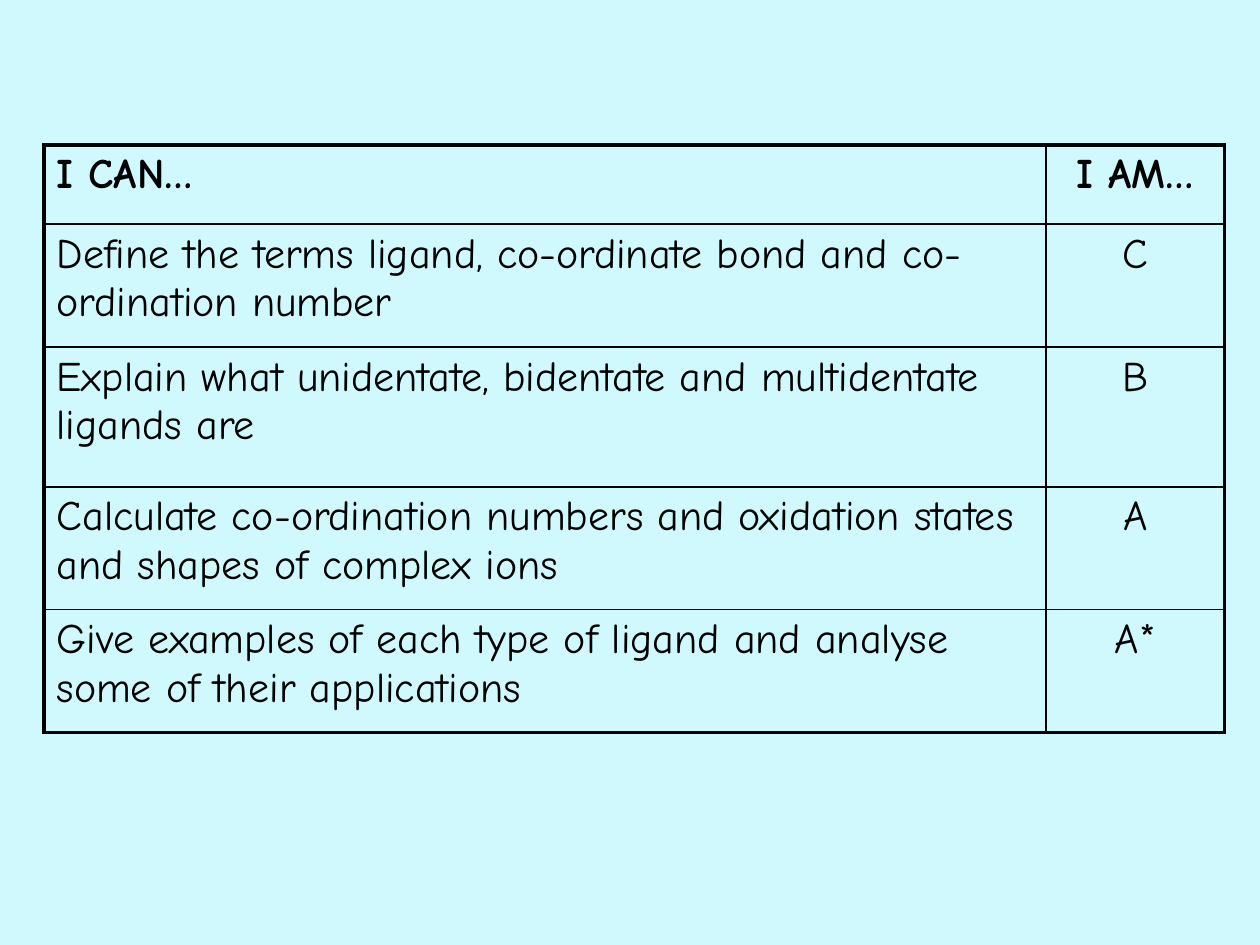
import pptx
import pptx.dml.color
import pptx.enum.text
import pptx.oxml.ns
import pptx.util
from lxml import etree


def color(value):
    return pptx.dml.color.RGBColor.from_string(value)


class Deck:
    font = "Comic Neue"
    size = 24
    ink = "000000"
    paper = "CFF9FD"
    thin = 1
    thick = 2.25

    def __init__(self, width, height):
        self.prs = pptx.Presentation()
        self.prs.slide_width = pptx.util.Inches(width)
        self.prs.slide_height = pptx.util.Inches(height)
        self.s = self.prs.slides.add_slide(self.prs.slide_layouts[6])
        fill = self.s.background.fill
        fill.solid()
        fill.fore_color.rgb = color(self.paper)

    def x(self, percent):
        return round(self.prs.slide_width * percent / 100)

    def y(self, percent):
        return round(self.prs.slide_height * percent / 100)

    def text(self, cell, content, align, bold):
        p = cell.text_frame.paragraphs[0]
        p.alignment = align
        r = p.add_run()
        r.text = content
        r.font.name = self.font
        r.font.size = pptx.util.Pt(self.size)
        r.font.bold = bold
        r.font.color.rgb = color(self.ink)

    def borders(self, cell, outer):
        tcPr = cell._tc.get_or_add_tcPr()
        for side in "LRTB":
            width = pptx.util.Pt(self.thick if side in outer else self.thin)
            ln = etree.SubElement(tcPr, pptx.oxml.ns.qn(f"a:ln{side}"), w=str(width))
            solid = etree.SubElement(ln, pptx.oxml.ns.qn("a:solidFill"))
            etree.SubElement(solid, pptx.oxml.ns.qn("a:srgbClr"), val=self.ink)

    def table(self, left, top, widths, heights, rows, aligns):
        table = self.s.shapes.add_table(
            len(rows), len(widths), self.x(left), self.y(top),
            self.x(sum(widths)), self.y(sum(heights))).table
        table.first_row = table.horz_banding = False
        for column, width in zip(table.columns, widths):
            column.width = self.x(width)
        for i, (height, row) in enumerate(zip(heights, rows)):
            table.rows[i].height = self.y(height)
            for j, content in enumerate(row):
                cell = table.cell(i, j)
                edges = {"L": j == 0, "R": j == len(widths) - 1,
                         "T": i == 0, "B": i == len(rows) - 1}
                self.borders(cell, [side for side in edges if edges[side]])
                cell.fill.background()
                self.text(cell, content, aligns[j], bold=i == 0)


def main():
    deck = Deck(10, 7.5)
    align = pptx.enum.text.PP_ALIGN
    goals = [
        ("I CAN…", "I AM…"),
        ("Define the terms ligand, co-ordinate bond and co-ordination number", "C"),
        ("Explain what unidentate, bidentate and multidentate ligands are", "B"),
        ("Calculate co-ordination numbers and oxidation states and shapes of complex ions", "A"),
        ("Give examples of each type of ligand and analyse some of their applications", "A*"),
    ]
    deck.table(3.5, 15.33, [79.5, 14.2], [8.4, 13, 14.8, 13, 13],
               goals, [align.LEFT, align.CENTER])
    deck.prs.save("out.pptx")


if __name__ == "__main__":
    main()
